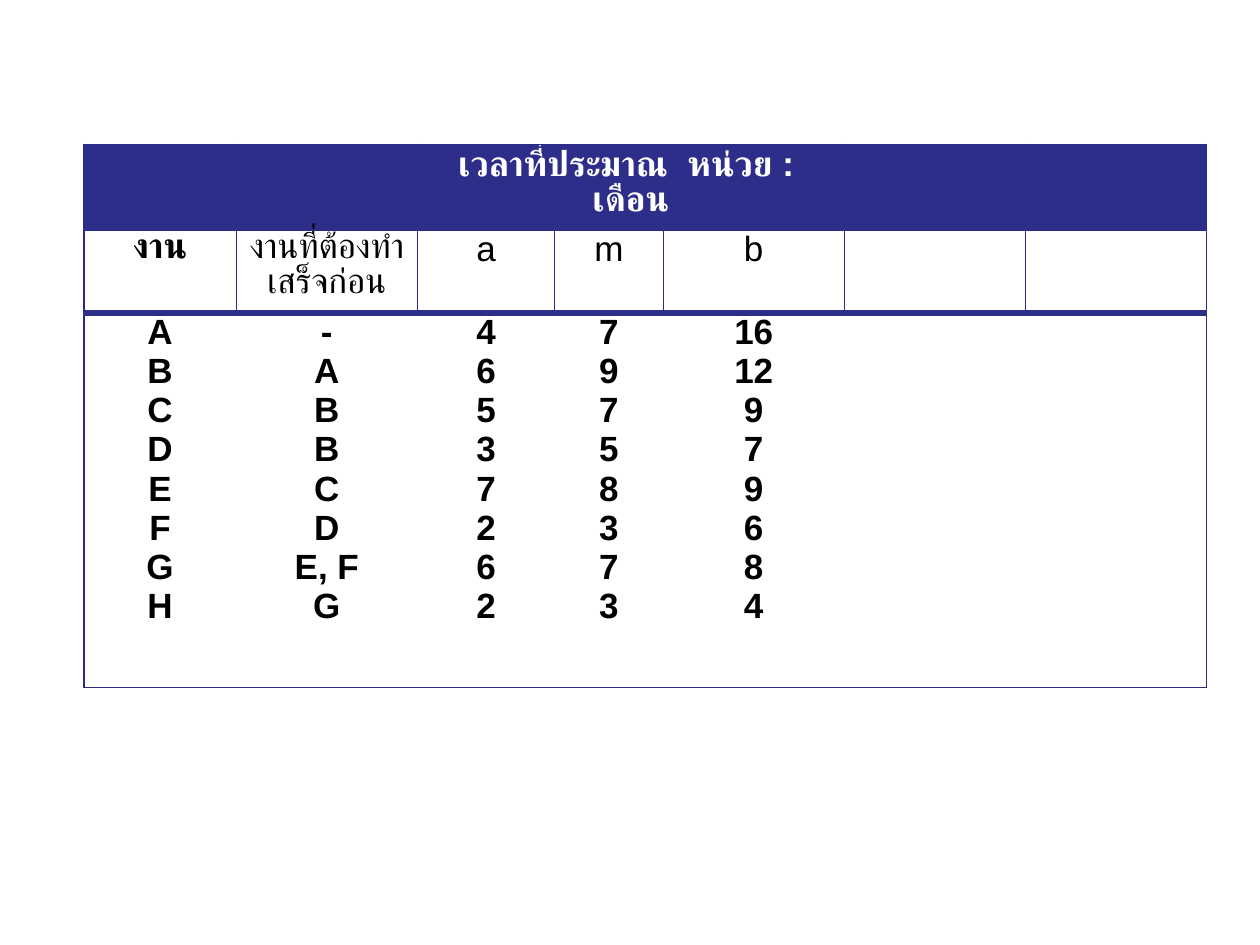
"""Build a slide with a table of task time estimates."""
from lxml import etree
from pptx import Presentation
from pptx.dml.color import RGBColor
from pptx.enum import text
from pptx.oxml import ns
from pptx.util import Pt

NAVY, BORDER, WHITE, BLACK = "2D2D8A", "2A2A89", "FFFFFF", "000000"
TITLE = "เวลาที่ประมาณ  หน่วย :  เดือน"
HEADINGS = ["งาน", "งานที่ต้องทำเสร็จก่อน", "a", "m", "b", "", ""]
TASKS = [
    ("A", "-", "4", "7", "16"),
    ("B", "A", "6", "9", "12"),
    ("C", "B", "5", "7", "9"),
    ("D", "B", "3", "5", "7"),
    ("E", "C", "7", "8", "9"),
    ("F", "D", "2", "3", "6"),
    ("G", "E, F", "6", "7", "8"),
    ("H", "G", "2", "3", "4"),
]
WIDTHS = [87, 103.5, 78.5, 62, 103.5, 103.5, 103.5]
HEIGHTS = [49, 47.5, 214]
LEFT, TOP = 48, 82.5
MARGINS = {"margin_left": Pt(5.76), "margin_right": Pt(5.76),
           "margin_top": 0, "margin_bottom": 0}


def rgb(value):
    """Turn a hex string into a colour."""
    return RGBColor.from_string(value)


def set_edges(cell, edges):
    """Draw the cell borders, given as side: (colour, width) or None."""
    properties = cell._tc.get_or_add_tcPr()
    for position, side in enumerate("LRTB"):
        line = etree.Element(ns.qn(f"a:ln{side}"))
        if edges[side]:
            colour, width = edges[side]
            line.set("w", str(Pt(width)))
            fill = etree.SubElement(line, ns.qn("a:solidFill"))
            etree.SubElement(fill, ns.qn("a:srgbClr"), val=colour)
        else:
            etree.SubElement(line, ns.qn("a:noFill"))
        properties.insert(position, line)


def write(cell, lines, colour, bold):
    """Write centred lines into a cell."""
    frame = cell.text_frame
    frame.text = "\n".join(lines)
    for paragraph in frame.paragraphs:
        paragraph.alignment = text.PP_ALIGN.CENTER
        font_format = {"name": "Arial", "size": Pt(20), "bold": bold}
        for key, value in font_format.items():
            setattr(paragraph.font, key, value)
            for run in paragraph.runs:
                setattr(run.font, key, value)
        for run in paragraph.runs:
            run.font.color.rgb = rgb(colour)


def main():
    """Build and save the slide."""
    deck = Presentation()
    deck.slide_width, deck.slide_height = Pt(720), Pt(540)
    slide = deck.slides.add_slide(deck.slide_layouts[6])
    estimates = slide.shapes.add_table(
        len(HEIGHTS), len(WIDTHS), Pt(LEFT), Pt(TOP),
        Pt(sum(WIDTHS)), Pt(sum(HEIGHTS))).table
    for column, width in zip(estimates.columns, WIDTHS):
        column.width = Pt(width)
    for row, height in zip(estimates.rows, HEIGHTS):
        row.height = Pt(height)

    thin, thick = (BORDER, 0.75), (NAVY, 4)
    last = len(WIDTHS) - 1
    blank = [""] * (len(WIDTHS) - len(TASKS[0]))
    task_columns = [*zip(*TASKS), *([item] for item in blank)]
    contents = [
        [[TITLE if index == 2 else ""] for index in range(len(WIDTHS))],
        [[heading] for heading in HEADINGS],
        task_columns,
    ]
    for row_index, row in enumerate(contents):
        title_row, heading_row, task_row = (row_index == n for n in range(3))
        for index, lines in enumerate(row):
            cell = estimates.cell(row_index, index)
            for key, value in MARGINS.items():
                setattr(cell, key, value)
            if title_row:
                cell.fill.solid()
                cell.fill.fore_color.rgb = rgb(NAVY)
            else:
                cell.fill.background()
            set_edges(cell, {
                "L": None if task_row and index > 0 else thin,
                "R": None if task_row and index < last else thin,
                "T": thick if task_row else thin,
                "B": thick if heading_row else thin,
            })
            write(cell, lines, WHITE if title_row else BLACK,
                  not heading_row or index == 0)
    estimates.cell(0, 2).merge(estimates.cell(0, 4))
    deck.save("out.pptx")


if __name__ == "__main__":
    main()
